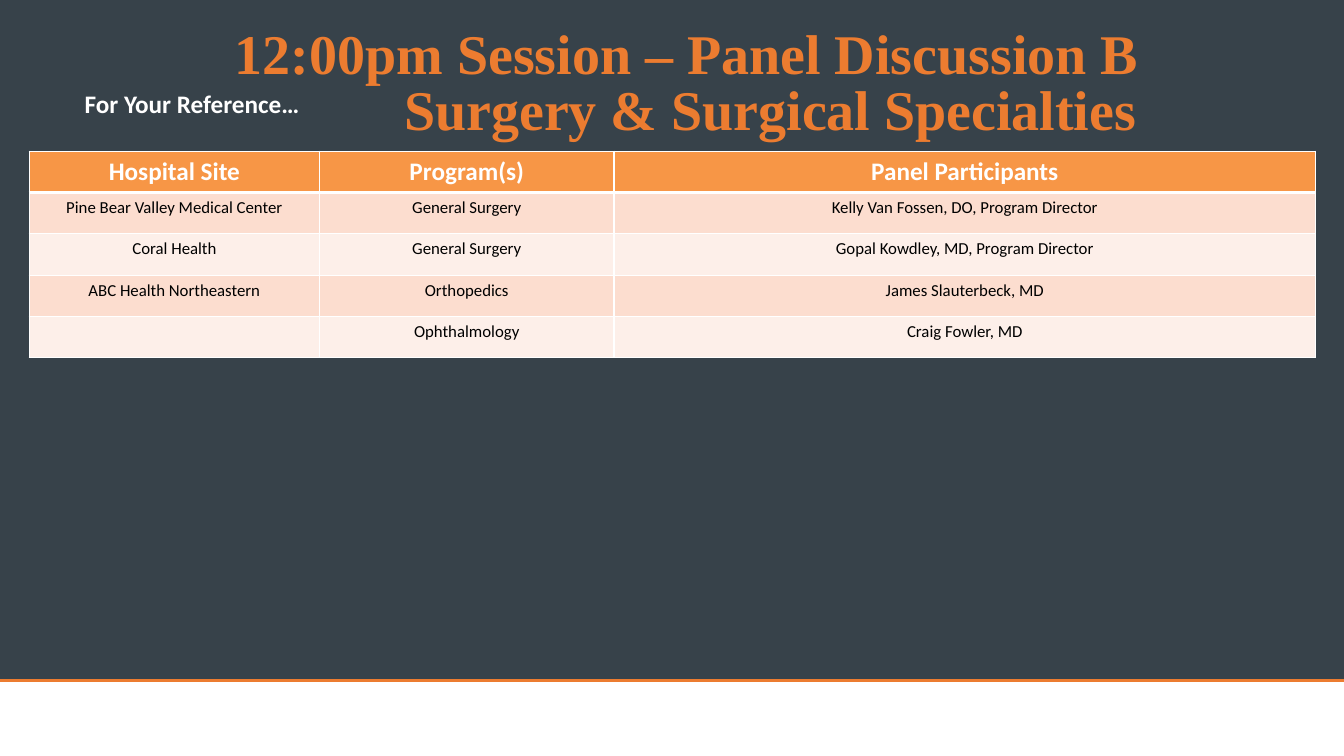
"""Build the surgery panel slide with its table of sites and speakers."""
import pptx
import pptx.dml.color
import pptx.enum.shapes
import pptx.enum.text
import pptx.oxml
import pptx.oxml.ns
import pptx.util
from pptx.util import Inches

RGBColor = pptx.dml.color.RGBColor
WHITE = RGBColor(0xFF, 0xFF, 0xFF)
BLACK = RGBColor(0, 0, 0)
SLATE = RGBColor(0x37, 0x42, 0x4A)
ORANGE = RGBColor(0xEC, 0x7C, 0x30)
AMBER = RGBColor(0xF7, 0x96, 0x46)
PEACH = RGBColor(0xFC, 0xDD, 0xCF)
CREAM = RGBColor(0xFD, 0xEF, 0xE9)

WIDTH = 13.33
SPLIT = 6.75
COLUMNS = (2.88, 2.92, 6.96)
ROW_HEIGHT = 0.41
ROWS = (
    ("Hospital Site", "Program(s)", "Panel Participants"),
    ("Pine Bear Valley Medical Center", "General Surgery",
     "Kelly Van Fossen, DO, Program Director"),
    ("Coral Health", "General Surgery", "Gopal Kowdley, MD, Program Director"),
    ("ABC Health Northeastern", "Orthopedics", "James Slauterbeck, MD"),
    ("", "Ophthalmology", "Craig Fowler, MD"),
)


def style(para, font, size, color, bold):
    """Format every run of a paragraph."""
    for run in para.runs:
        run.font.name = font
        run.font.size = pptx.util.Pt(size)
        run.font.color.rgb = color
        run.font.bold = bold


def write(shape, box, text, font, size, color, top, indent):
    """Place a text shape and fill it with one bold paragraph."""
    shape.left, shape.top, shape.width, shape.height = map(Inches, box)
    frame = shape.text_frame
    frame.text = text
    frame.word_wrap = True
    frame.auto_size = pptx.enum.text.MSO_AUTO_SIZE.NONE
    frame.vertical_anchor = pptx.enum.text.MSO_ANCHOR.TOP
    frame.margin_left = frame.margin_right = frame.margin_bottom = 0
    frame.margin_top = Inches(top)
    para = frame.paragraphs[0]
    para.alignment = pptx.enum.text.PP_ALIGN.LEFT
    para.line_spacing = 1.0
    props = para._p.get_or_add_pPr()
    props.set("marL", str(Inches(indent)))
    props.set("indent", "0")
    style(para, font, size, color, True)


def add_band(slide, top, height, color):
    """Add a full-width band behind the title."""
    band = slide.shapes.add_shape(
        pptx.enum.shapes.MSO_SHAPE.RECTANGLE,
        0, Inches(top), Inches(WIDTH), Inches(height))
    band.shadow.inherit = False
    band.fill.solid()
    band.fill.fore_color.rgb = color
    band.line.fill.background()
    slide.shapes.title._element.addprevious(band._element)


def add_rule(slide):
    """Add the orange rule where the two bands meet."""
    rule = slide.shapes.add_connector(
        pptx.enum.shapes.MSO_CONNECTOR.STRAIGHT,
        0, Inches(SPLIT), Inches(WIDTH), Inches(SPLIT))
    rule.line.color.rgb = ORANGE
    rule.line.width = pptx.util.Pt(2.25)
    rule._element.spPr.append(pptx.oxml.parse_xml(
        f'<a:effectLst {pptx.oxml.ns.nsdecls("a")}/>'))
    slide.shapes.title._element.addprevious(rule._element)


def add_edge(cell, side, points):
    """Give one side of a cell a white border."""
    cell._tc.get_or_add_tcPr().append(pptx.oxml.parse_xml(
        f'<a:ln{side} {pptx.oxml.ns.nsdecls("a")} w="{pptx.util.Pt(points)}">'
        f'<a:solidFill><a:srgbClr val="{WHITE}"/></a:solidFill></a:ln{side}>'))


def fill_cell(cell, text, row):
    """Write, border and color one cell by its row."""
    head = row == 0
    edges = {"L": 1, "R": 1, "T": 3 if row == 1 else 1, "B": 3 if head else 1}
    for side, points in edges.items():
        add_edge(cell, side, points)
    cell.fill.solid()
    cell.fill.fore_color.rgb = AMBER if head else (CREAM, PEACH)[row % 2]
    cell.text_frame.text = text
    para = cell.text_frame.paragraphs[0]
    para.alignment = pptx.enum.text.PP_ALIGN.CENTER
    style(para, "Calibri", 18 if head else 12, WHITE if head else BLACK, head)


def add_grid(slide):
    """Add the table of sites, programs and speakers."""
    table = slide.shapes.add_table(
        len(ROWS), len(COLUMNS), Inches(0.29), Inches(1.5),
        Inches(sum(COLUMNS)), Inches(ROW_HEIGHT * len(ROWS))).table
    for column, width in zip(table.columns, COLUMNS):
        column.width = Inches(width)
    for row, texts in enumerate(ROWS):
        table.rows[row].height = Inches(ROW_HEIGHT)
        for column, text in enumerate(texts):
            fill_cell(table.cell(row, column), text, row)


def main():
    """Build and save the slide."""
    deck = pptx.Presentation()
    deck.slide_width, deck.slide_height = Inches(WIDTH), Inches(7.5)
    slide = deck.slides.add_slide(deck.slide_layouts[5])
    add_band(slide, 0, SPLIT, SLATE)
    add_band(slide, SPLIT, 7.5 - SPLIT, WHITE)
    add_rule(slide)
    serif = ("Times New Roman", 40, ORANGE, 0.07)
    write(slide.shapes.title, (0.11, 0.11, 13.11, 0.67),
          "12:00pm Session – Panel Discussion B", *serif, 2.22)
    write(slide.shapes.add_textbox(0, 0, 0, 0), (4, 0.67, 8, 0.67),
          "Surgery & Surgical Specialties", *serif, 0.01)
    write(slide.shapes.add_textbox(0, 0, 0, 0), (0.83, 0.87, 2.16, 0.28),
          "For Your Reference…", "Calibri", 18, WHITE, 0.01, 0.01)
    add_grid(slide)
    deck.save("out.pptx")


if __name__ == "__main__":
    main()
